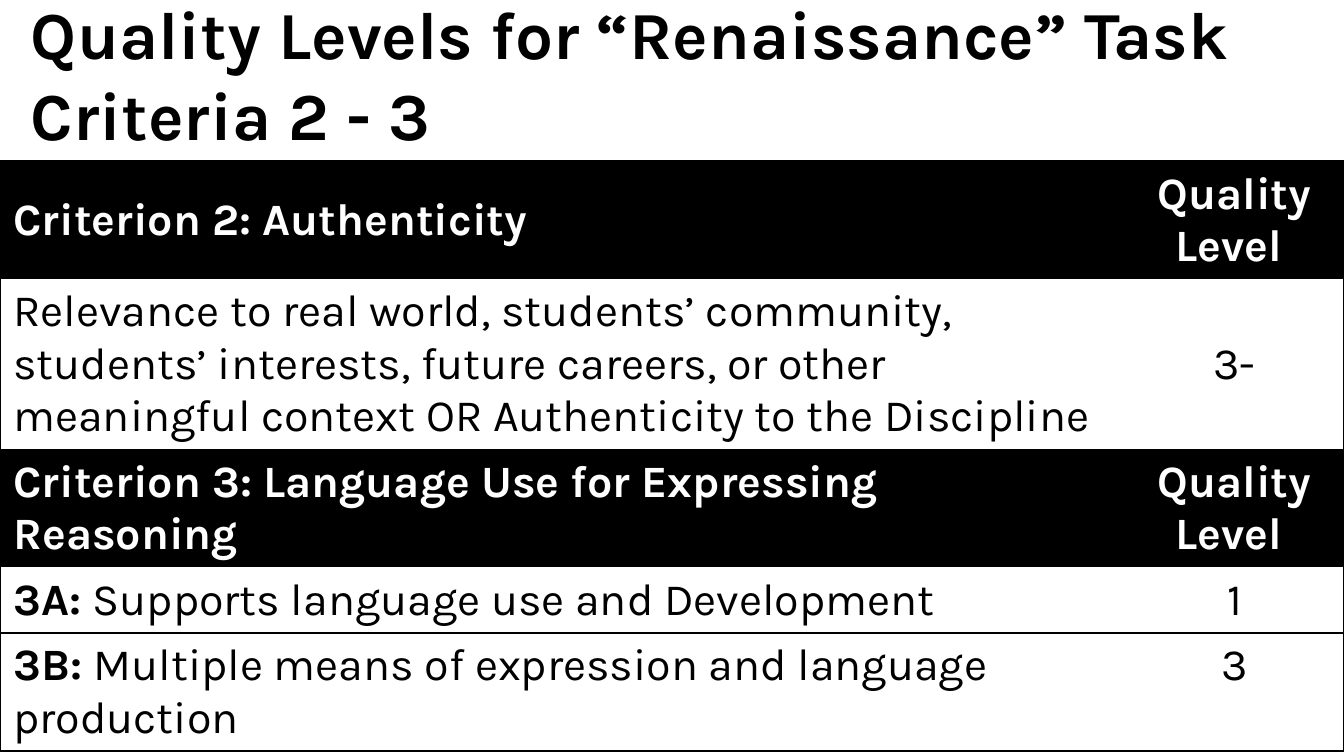
from dataclasses import dataclass

from lxml.etree import SubElement
from pptx import Presentation
from pptx.dml.color import RGBColor
from pptx.enum.text import MSO_ANCHOR, PP_ALIGN
from pptx.oxml import parse_xml
from pptx.oxml.ns import nsdecls, qn
from pptx.table import _Cell
from pptx.text.text import _Paragraph
from pptx.util import Inches, Pt

BLACK = RGBColor(0x00, 0x00, 0x00)
WHITE = RGBColor(0xFF, 0xFF, 0xFF)
FONT = "Karla"


@dataclass
class CriterionRow:
    height: float
    label: str
    text: str
    level: str
    header: bool = False
    anchor: MSO_ANCHOR = MSO_ANCHOR.TOP


ROWS = [
    CriterionRow(0.87, "Criterion 2: Authenticity", "", "Quality Level ", True, MSO_ANCHOR.MIDDLE),
    CriterionRow(
        1.26, "",
        "Relevance to real world, students’ community, students’ interests, "
        "future careers, or other meaningful context OR Authenticity to the Discipline",
        "3-", anchor=MSO_ANCHOR.MIDDLE),
    CriterionRow(0.87, "Criterion 3: Language Use for Expressing Reasoning", "", "Quality Level ", True),
    CriterionRow(0.49, "3A: ", "Supports language use and Development", "1"),
    CriterionRow(0.87, "3B: ", "Multiple means of expression and language production", "3"),
]
COLUMN_WIDTHS = [8.37, 1.63]


def add_run(paragraph: _Paragraph, text: str, size: int, color: RGBColor, bold: bool) -> None:
    run = paragraph.add_run()
    run.text = text
    run.font.name = FONT
    run.font.size = Pt(size)
    run.font.bold = bold
    run.font.color.rgb = color


def set_borders(cell: _Cell, visible: str) -> None:
    """Draw the sides named in visible (L, R, T, B) and clear the others."""
    properties = cell._tc.get_or_add_tcPr()
    for index, side in enumerate("LRTB"):
        line = parse_xml(f'<a:ln{side} {nsdecls("a")} w="{Pt(1)}"/>')
        if side in visible:
            fill = SubElement(line, qn("a:solidFill"))
            SubElement(fill, qn("a:srgbClr")).set("val", str(BLACK))
        else:
            SubElement(line, qn("a:noFill"))
        properties.insert(index, line)


def fill_cell(cell: _Cell, row: CriterionRow, parts: list[tuple[str, bool]],
              alignment: PP_ALIGN, borders: str) -> None:
    cell.fill.solid()
    cell.fill.fore_color.rgb = BLACK if row.header else WHITE
    cell.vertical_anchor = row.anchor
    paragraph = cell.text_frame.paragraphs[0]
    paragraph.alignment = alignment
    for text, bold in parts:
        if text:
            add_run(paragraph, text, 24, WHITE if row.header else BLACK, bold)
    set_borders(cell, borders)


# Widescreen slide, 16 to 9
presentation = Presentation()
presentation.slide_width = Inches(10)
presentation.slide_height = Inches(10) * 9 // 16
slide = presentation.slides.add_slide(presentation.slide_layouts[5])

# Title
title = slide.shapes.title
title.left, title.top = Inches(0.13), Inches(-0.18)
title.width, title.height = Inches(9.5), Inches(1.45)
title.text_frame.vertical_anchor = MSO_ANCHOR.MIDDLE
title_paragraph = title.text_frame.paragraphs[0]
title_paragraph.alignment = PP_ALIGN.LEFT
add_run(title_paragraph, "Quality Levels for “Renaissance” Task Criteria 2 - 3", 36, BLACK, True)

# Criteria table
table = slide.shapes.add_table(
    len(ROWS), len(COLUMN_WIDTHS), Inches(0), Inches(1.2),
    Inches(sum(COLUMN_WIDTHS)), Inches(sum(row.height for row in ROWS))).table
table.first_row = False
table.horz_banding = False
for column, width in zip(table.columns, COLUMN_WIDTHS):
    column.width = Inches(width)

for index, row in enumerate(ROWS):
    table.rows[index].height = Inches(row.height)
    # Lines above the table and around the rows of criterion 3
    horizontal = ("T" if index in (0, 4) else "") + ("B" if index >= 3 else "")
    fill_cell(table.cell(index, 0), row, [(row.label, True), (row.text, False)],
              PP_ALIGN.LEFT, "L" + horizontal)
    fill_cell(table.cell(index, 1), row, [(row.level, row.header)],
              PP_ALIGN.CENTER, "R" + horizontal)

presentation.save("out.pptx")
